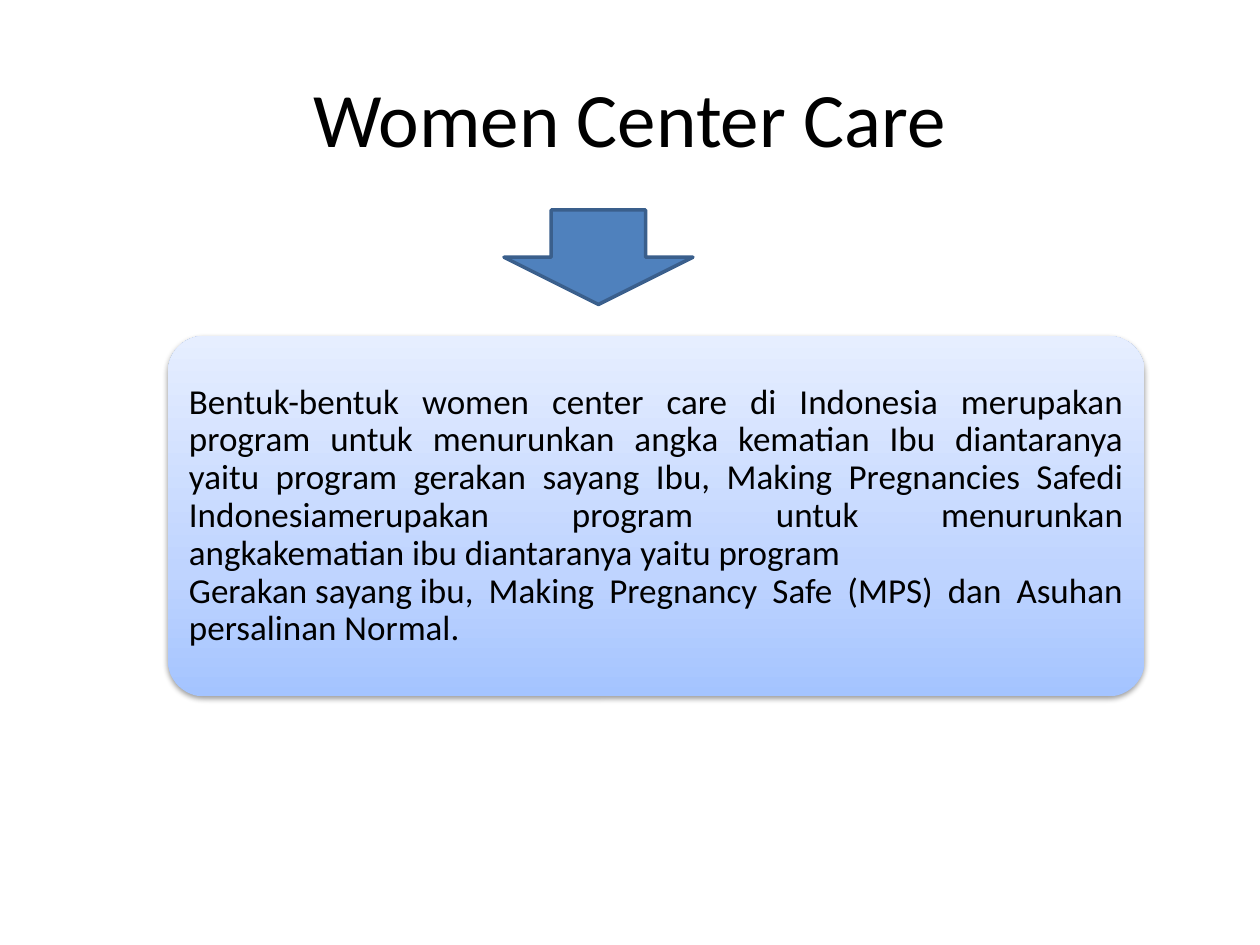
import copy

import lxml.etree
import pptx
import pptx.dml.color
import pptx.enum.shapes
import pptx.enum.text
import pptx.oxml
import pptx.oxml.ns
import pptx.util

Pt = pptx.util.Pt
RGB = pptx.dml.color.RGBColor
SHAPE = pptx.enum.shapes.MSO_SHAPE
ALIGN = pptx.enum.text.PP_ALIGN
MIDDLE = pptx.enum.text.MSO_ANCHOR.MIDDLE

BLACK = RGB(0x00, 0x00, 0x00)
ARROW_FILL = RGB(0x4F, 0x81, 0xBD)
ARROW_LINE = RGB(0x3A, 0x5F, 0x8C)
PANEL_STOPS = [
    (0, RGB(0xA4, 0xC4, 0xFF)),
    (0.35, RGB(0xBF, 0xD4, 0xFF)),
    (1, RGB(0xE6, 0xEE, 0xFF)),
]


def keep_together(phrase):
    """Join the words of a phrase with no-break spaces."""
    return phrase.replace(" ", chr(160))


TITLE = "Women Center Care"
BODY = " ".join([
    "Bentuk-bentuk women center care di Indonesia merupakan program untuk",
    "menurunkan angka kematian Ibu diantaranya yaitu program gerakan sayang Ibu,",
    "Making Pregnancies Safedi Indonesiamerupakan program untuk menurunkan",
    keep_together("angkakematian ibu diantaranya yaitu program"),
    keep_together("Gerakan sayang ibu,"),
    "Making Pregnancy Safe (MPS) dan Asuhan persalinan Normal.",
])


def set_attrs(obj, values):
    """Set each attribute named in a dict of format values."""
    for name, value in values.items():
        setattr(obj, name, value)


def write_text(sp, text, size, align, margin, spacing):
    """Write one vertically centred paragraph into a shape."""
    tf = sp.text_frame
    frame = dict.fromkeys(
        ("margin_left", "margin_top", "margin_right", "margin_bottom"), margin)
    set_attrs(tf, {"word_wrap": True, "vertical_anchor": MIDDLE, **frame})
    p = tf.paragraphs[0]
    set_attrs(p, {"alignment": align, "line_spacing": spacing})
    r = p.add_run()
    r.text = text
    set_attrs(r.font, {"name": "Calibri", "size": Pt(size)})
    r.font.color.rgb = BLACK


def fill_gradient(sp, stops):
    """Fill a shape with three stops running from bottom to top."""
    sp.fill.gradient()
    sp.fill.gradient_angle = 90
    gs_list = sp._element.spPr.find(".//" + pptx.oxml.ns.qn("a:gsLst"))
    gs_list.append(copy.deepcopy(gs_list[-1]))
    for stop, (position, color) in zip(sp.fill.gradient_stops, stops):
        stop.position = position
        stop.color.rgb = color


def add_shadow(sp, blur, distance, opacity):
    """Give a shape a soft black shadow that falls straight down."""
    sp.shadow.inherit = False
    effects = sp._element.spPr.find(pptx.oxml.ns.qn("a:effectLst"))
    shadow = lxml.etree.SubElement(
        effects, pptx.oxml.ns.qn("a:outerShdw"),
        blurRad=str(Pt(blur)), dist=str(Pt(distance)), dir="5400000",
        rotWithShape="0")
    color = lxml.etree.SubElement(shadow, pptx.oxml.ns.qn("a:srgbClr"), val="000000")
    lxml.etree.SubElement(color, pptx.oxml.ns.qn("a:alpha"), val=str(opacity * 1000))


def add_title(s, left, top, width, height):
    """Place the slide title in its placeholder."""
    sp = s.shapes.title
    set_attrs(sp, {"left": Pt(left), "top": Pt(top),
                   "width": Pt(width), "height": Pt(height)})
    write_text(sp, TITLE, 44, ALIGN.CENTER, Pt(3.6), 1.0)


def add_panel(s, left, top, width, height):
    """Place the rounded gradient panel with its inset text."""
    group = s.shapes.add_group_shape()
    sp = group.shapes.add_shape(
        SHAPE.ROUNDED_RECTANGLE, Pt(left), Pt(top), Pt(width), Pt(height))
    sp.adjustments[0] = 0.1
    fill_gradient(sp, PANEL_STOPS)
    sp.line.fill.background()
    add_shadow(sp, 3.1, 1.6, 38)
    inset = 6
    box = group.shapes.add_textbox(
        Pt(left + inset), Pt(top + inset),
        Pt(width - 2 * inset), Pt(height - 2 * inset))
    write_text(box, BODY, 20, ALIGN.JUSTIFY, Pt(6), 0.9)


def add_arrow(s, left, top, width, height):
    """Place the down arrow that leads from the title to the panel."""
    sp = s.shapes.add_shape(
        SHAPE.DOWN_ARROW, Pt(left), Pt(top), Pt(width), Pt(height))
    sp.shadow.inherit = False
    sp.fill.solid()
    sp.fill.fore_color.rgb = ARROW_FILL
    sp.line.color.rgb = ARROW_LINE
    sp.line.width = Pt(2)


def main():
    """Build the slide and save it."""
    prs = pptx.Presentation()
    set_attrs(prs, {"slide_width": Pt(720), "slide_height": Pt(540)})
    s = prs.slides.add_slide(prs.slide_layouts[5])
    add_title(s, 36, 21.6, 648, 90)
    add_panel(s, 96, 192, 558, 206)
    add_arrow(s, 288, 120, 108, 54)
    prs.save("out.pptx")


if __name__ == "__main__":
    main()
